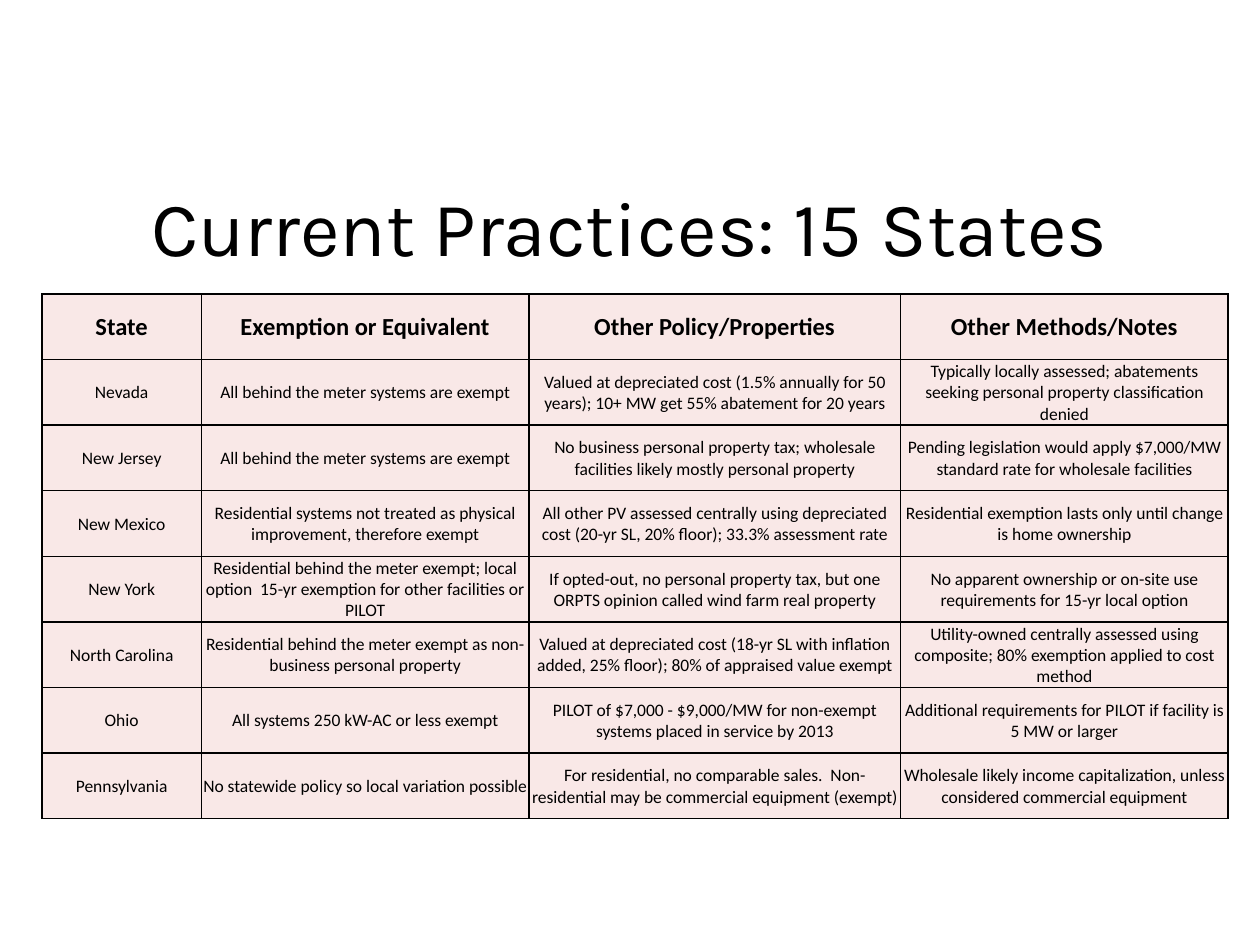
from lxml import etree
from pptx import Presentation
from pptx.dml.color import RGBColor
from pptx.enum import text as t
from pptx.oxml import ns
from pptx.util import Pt

# Content
TITLE = "Current Practices: 15 States"
HEAD = ("State", "Exemption or Equivalent", "Other Policy/Properties", "Other Methods/Notes")
STATES = [
    ("Nevada",
     "All behind the meter systems are exempt",
     "Valued at depreciated cost (1.5% annually for 50 years); 10+ MW get 55% abatement for 20 years",
     "Typically locally assessed; abatements seeking personal property classification denied"),
    ("New Jersey",
     "All behind the meter systems are exempt",
     "No business personal property tax; wholesale facilities likely mostly personal property",
     "Pending legislation would apply $7,000/MW standard rate for wholesale facilities"),
    ("New Mexico",
     "Residential systems not treated as physical improvement, therefore exempt",
     "All other PV assessed centrally using depreciated cost (20-yr SL, 20% floor); 33.3% assessment rate",
     "Residential exemption lasts only until change is home ownership"),
    ("New York",
     "Residential behind the meter exempt; local option  15-yr exemption for other facilities or PILOT",
     "If opted-out, no personal property tax, but one ORPTS opinion called wind farm real property",
     "No apparent ownership or on-site use requirements for 15-yr local option"),
    ("North Carolina",
     "Residential behind the meter exempt as non-business personal property",
     "Valued at depreciated cost (18-yr SL with inflation added, 25% floor); 80% of appraised value exempt",
     "Utility-owned centrally assessed using composite; 80% exemption applied to cost method"),
    ("Ohio",
     "All systems 250 kW-AC or less exempt",
     "PILOT of $7,000 - $9,000/MW for non-exempt systems placed in service by 2013",
     "Additional requirements for PILOT if facility is 5 MW or larger"),
    ("Pennsylvania",
     "No statewide policy so local variation possible",
     "For residential, no comparable sales.  Non-residential may be commercial equipment (exempt)",
     "Wholesale likely income capitalization, unless considered commercial equipment"),
]

# Layout and colours
LEFT, TOP, ROW = 24, 168, 37.5
COLS = (91, 187.2, 212.4, 187.2)
INK, PINK = "000000", "F9E8E7"


def color(code):
    return RGBColor.from_string(code)


def write(frame, words, font="Calibri", size=10, bold=False):
    frame.word_wrap = True
    para = frame.paragraphs[0]
    para.alignment = t.PP_ALIGN.CENTER
    run = para.add_run()
    run.text = words
    run.font.name, run.font.size, run.font.bold = font, Pt(size), bold
    run.font.color.rgb = color(INK)


def border(cell, width=1):
    props = cell._tc.get_or_add_tcPr()
    for spot, side in enumerate(("lnL", "lnR", "lnT", "lnB")):
        line = etree.Element(ns.qn("a:" + side), w=str(Pt(width)))
        fill = etree.SubElement(line, ns.qn("a:solidFill"))
        etree.SubElement(fill, ns.qn("a:srgbClr"), val=INK)
        props.insert(spot, line)


def main():
    deck = Presentation()
    deck.slide_width, deck.slide_height = Pt(720), Pt(540)
    slide = deck.slides.add_slide(deck.slide_layouts[5])

    # Title
    title = slide.shapes.title
    title.left, title.top, title.width, title.height = Pt(36), Pt(84), Pt(648), Pt(90)
    title.text_frame.vertical_anchor = t.MSO_ANCHOR.MIDDLE
    write(title.text_frame, TITLE, font="Karla", size=44)

    # Table of states
    rows = [HEAD] + STATES
    grid = slide.shapes.add_table(len(rows), len(COLS), Pt(LEFT), Pt(TOP),
                                  Pt(sum(COLS)), Pt(ROW * len(rows))).table
    for col, width in zip(grid.columns, COLS):
        col.width = Pt(width)
    for r, row in enumerate(rows):
        grid.rows[r].height = Pt(ROW)
        for c, words in enumerate(row):
            cell = grid.cell(r, c)
            cell.margin_left = cell.margin_right = cell.margin_top = Pt(0.75)
            cell.margin_bottom = 0
            cell.vertical_anchor = t.MSO_ANCHOR.MIDDLE
            cell.fill.solid()
            cell.fill.fore_color.rgb = color(PINK)
            border(cell)
            write(cell.text_frame, words, size=10 if r else 14, bold=r == 0)

    deck.save("out.pptx")


if __name__ == "__main__":
    main()
